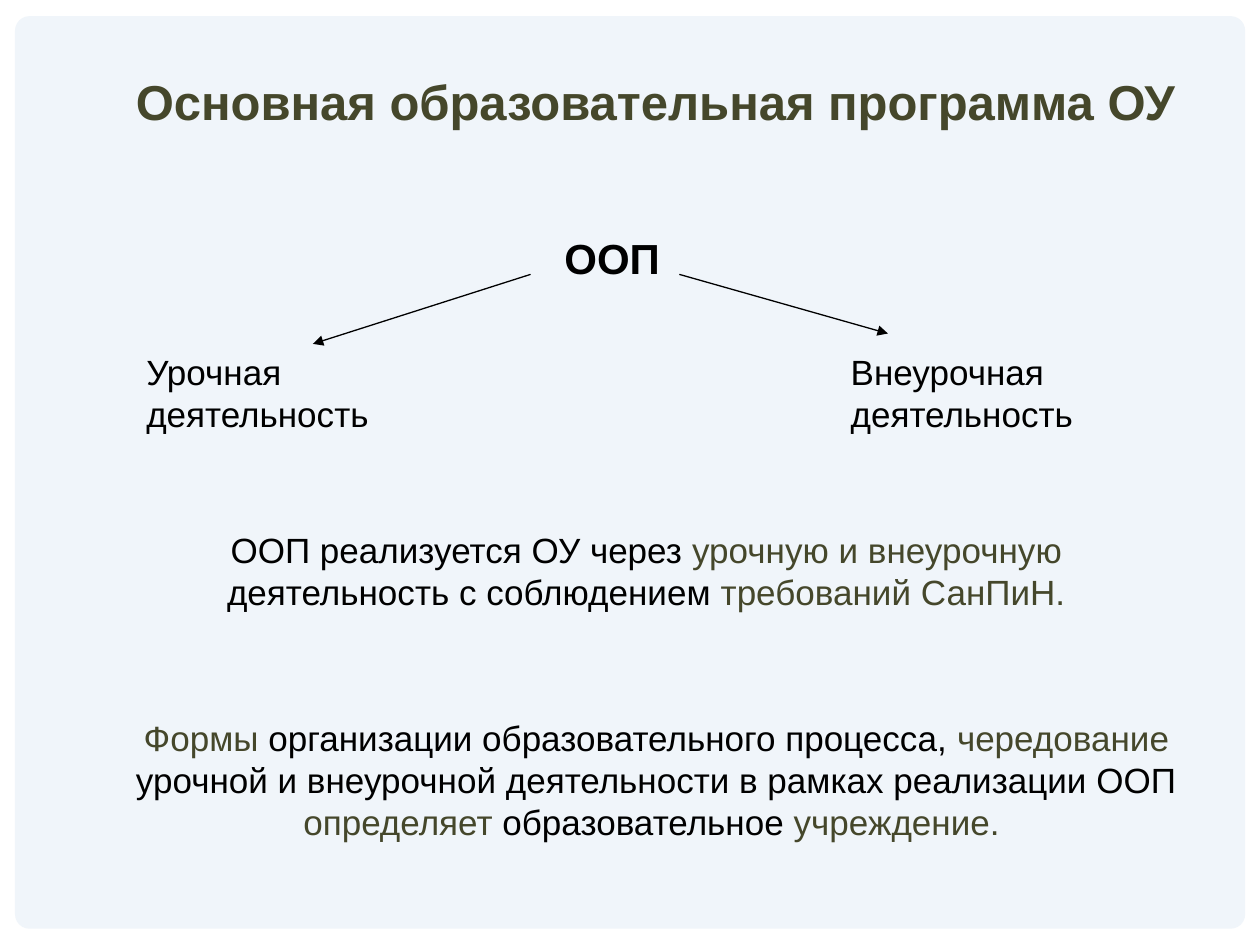
from lxml import etree
from pptx import Presentation
from pptx.dml.color import RGBColor
from pptx.enum.shapes import MSO_CONNECTOR as Connector, MSO_SHAPE as Shape
from pptx.enum.text import MSO_ANCHOR as Anchor, PP_ALIGN as Align
from pptx.oxml.ns import qn
from pptx.util import Pt

BLACK, OLIVE, PALE_BLUE = "000000", "45472B", "F0F5FA"


def color(value):
    return RGBColor.from_string(value)


def add_text(place, spans, size, bold=False, centered=False):
    """Add a text box holding one paragraph of (text, colour) spans."""
    box = slide.shapes.add_textbox(*[Pt(length) for length in place])
    frame = box.text_frame
    frame.word_wrap = True
    frame.vertical_anchor = Anchor.MIDDLE if centered else Anchor.TOP
    para = frame.paragraphs[0]
    para.alignment = Align.CENTER if centered else Align.LEFT
    for text, text_color in spans:
        span = para.add_run()
        span.text = text
        span.font.name = "Arial"
        span.font.size = Pt(size)
        span.font.bold = bold
        span.font.color.rgb = color(text_color)


deck = Presentation()
deck.slide_width, deck.slide_height = Pt(720), Pt(540)
slide = deck.slides.add_slide(deck.slide_layouts[6])

panel = slide.shapes.add_shape(Shape.ROUNDED_RECTANGLE, Pt(8.6), Pt(9.2), Pt(703), Pt(521.5))
panel.adjustments[0] = 0.016
panel.shadow.inherit = False
panel.fill.solid()
panel.fill.fore_color.rgb = color(PALE_BLUE)
panel.line.fill.background()

add_text((70.6, 37.4, 623.5, 41), [("Основная образовательная программа ОУ", OLIVE)], 28, bold=True)

# Programme and its two branches
add_text((315.4, 129.6, 78.5, 36), [("ООП", BLACK)], 24, bold=True)
for left, label in [(76.5, "Урочная деятельность"), (479, "Внеурочная деятельность")]:
    add_text((left, 196.5, 147.6, 55.5), [(label, BLACK)], 20)

for start_x, end_x, end_y in [(303.2, 178.8, 196.5), (388.2, 507.4, 190.6)]:
    arrow = slide.shapes.add_connector(Connector.STRAIGHT, Pt(start_x), Pt(156.8), Pt(end_x), Pt(end_y))
    arrow.line.color.rgb = color(BLACK)
    arrow.line.width = Pt(0.75)
    etree.SubElement(arrow.line._get_or_add_ln(), qn("a:tailEnd"), type="triangle")
    etree.SubElement(arrow._element.spPr, qn("a:effectLst"))

# Explanations
add_text((84.2, 298, 570.2, 55.5), [
    ("ООП реализуется ОУ через ", BLACK),
    ("урочную и внеурочную ", OLIVE),
    ("деятельность с соблюдением ", BLACK),
    ("требований СанПиН.", OLIVE),
], 20, centered=True)
add_text((50.4, 406, 649.4, 79.2), [
    ("Формы ", OLIVE),
    ("организации образовательного процесса, ", BLACK),
    ("чередование ", OLIVE),
    ("урочной и внеурочной деятельности в рамках реализации ООП ", BLACK),
    ("определяет", OLIVE),
    (" образовательное ", BLACK),
    ("учреждение. ", OLIVE),
], 20, centered=True)

deck.save("out.pptx")
